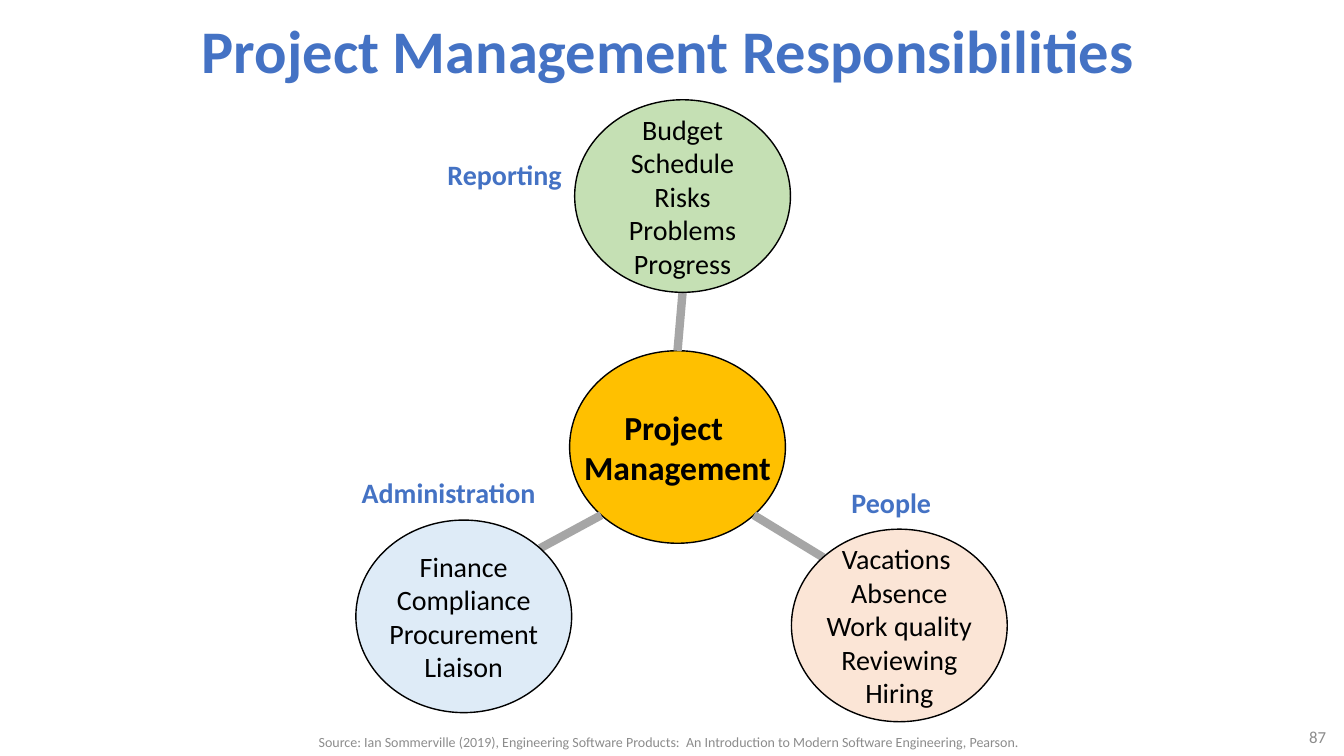
from math import cos, radians, sin

from lxml import etree
from pptx import Presentation
from pptx.dml.color import RGBColor
from pptx.enum import shapes, text
from pptx.oxml import ns
from pptx.util import Inches, Pt

# Colours
BLUE = RGBColor(0x44, 0x72, 0xC4)
BLACK = RGBColor(0, 0, 0)
GREY = RGBColor(0x8C, 0x8C, 0x8C)
LINK_GREY = RGBColor(0xA6, 0xA6, 0xA6)
GOLD = RGBColor(0xFF, 0xC0, 0x00)
GREEN = RGBColor(0xC5, 0xE0, 0xB4)
PALE_BLUE = RGBColor(0xDE, 0xEB, 0xF7)
PEACH = RGBColor(0xFB, 0xE5, 0xD6)

# Content
TITLE = "Project Management Responsibilities"
SOURCE = ("Source: Ian Sommerville (2019), Engineering Software Products:  "
          "An Introduction to Modern Software Engineering, Pearson.")
PAGE = "87"
HUB = ["Project ", "Management"]
HUB_AT = (5.65, 3.48)
# Angles run clockwise from the right, in degrees: where the link leaves the hub
AREAS = [
    dict(label="Reporting", label_box=(4.33, 1.51, 1.35, 0.44), at=(5.7, 0.99),
         fill=GREEN, angle=270,
         duties=["Budget", "Schedule", "Risks", "Problems", "Progress"]),
    dict(label="Administration", label_box=(3.48, 4.67, 1.94, 0.44), at=(3.53, 5.16),
         fill=PALE_BLUE, angle=135,
         duties=["Finance", "Compliance", "Procurement", "Liaison"]),
    dict(label="People", label_box=(8.34, 4.77, 1, 0.44), at=(7.85, 5.25),
         fill=PEACH, angle=45,
         duties=["Vacations ", "Absence", "Work quality", "Reviewing", "Hiring"]),
]
WIDTH, HEIGHT = 2.14, 1.91

deck = Presentation()
deck.slide_width, deck.slide_height = Inches(13.33), Inches(7.5)
slide = deck.slides.add_slide(deck.slide_layouts[6])


def write(frame, lines, size, colour, bold=False, align=text.PP_ALIGN.CENTER):
    frame.text = "\n".join(lines)
    for paragraph in frame.paragraphs:
        paragraph.alignment = align
        for run in paragraph.runs:
            run.font.name = "Calibri"
            run.font.size = Pt(size)
            run.font.bold = bold
            run.font.color.rgb = colour


def add_text(box, line, size, colour, wrap=True, anchor=text.MSO_ANCHOR.MIDDLE, **style):
    frame = slide.shapes.add_textbox(*map(Inches, box)).text_frame
    frame.word_wrap = wrap
    frame.vertical_anchor = anchor
    write(frame, [line], size, colour, **style)


def add_circle(at, lines, fill, size, bold=False):
    circle = slide.shapes.add_shape(shapes.MSO_SHAPE.OVAL, *map(Inches, (*at, WIDTH, HEIGHT)))
    circle.shadow.inherit = False
    circle.fill.solid()
    circle.fill.fore_color.rgb = fill
    circle.line.color.rgb = BLACK
    circle.line.width = Pt(1)
    frame = circle.text_frame
    frame.margin_left = frame.margin_right = frame.margin_top = frame.margin_bottom = 0
    frame.word_wrap = False
    frame.vertical_anchor = text.MSO_ANCHOR.MIDDLE
    write(frame, lines, size, BLACK, bold)


def rim(at, angle):
    """Point on the edge of the circle placed at `at`."""
    turn = radians(angle)
    return (Inches(at[0] + WIDTH / 2 * (1 + cos(turn))),
            Inches(at[1] + HEIGHT / 2 * (1 + sin(turn))))


def add_link(area):
    link = slide.shapes.add_connector(
        shapes.MSO_CONNECTOR.STRAIGHT,
        *rim(HUB_AT, area["angle"]), *rim(area["at"], area["angle"] + 180))
    link.line.color.rgb = LINK_GREY
    link.line.width = Pt(6)
    etree.SubElement(link._element.spPr, ns.qn("a:effectLst"))


# Title and footer
add_text((1.78, -0.01, 9.69, 1), TITLE, 43.2, BLUE, bold=True)
add_text((12.2, 7.18, 1.05, 0.26), PAGE, 12, GREY, align=text.PP_ALIGN.RIGHT)
add_text((2.34, 7.22, 8.58, 0.28), SOURCE, 10, GREY)

# Hub, links and areas
add_circle(HUB_AT, HUB, GOLD, 24, bold=True)
for area in AREAS:
    add_link(area)
    add_circle(area["at"], area["duties"], area["fill"], 20)
    add_text(area["label_box"], area["label"], 20, BLUE, wrap=False,
             anchor=text.MSO_ANCHOR.TOP, bold=True)

deck.save("out.pptx")
